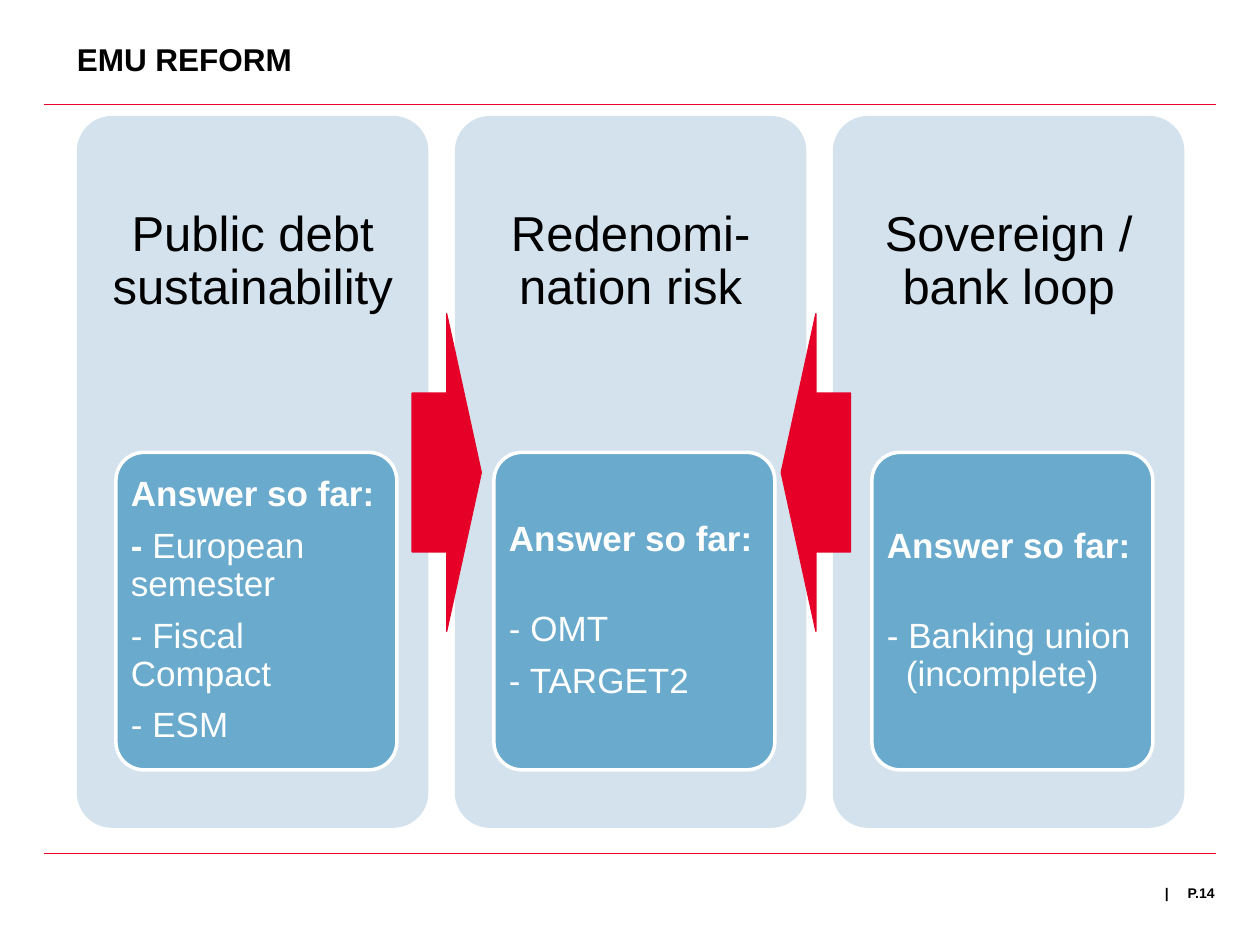
from dataclasses import dataclass

from lxml import etree
from pptx import Presentation
from pptx import util as u
from pptx.dml.color import RGBColor
from pptx.enum import shapes, text
from pptx.oxml import ns


@dataclass(frozen=True)
class Theme:
    """Colours, font and type sizes of the slide."""
    font: str = "Arial"
    red: str = "E60028"
    panel: str = "D4E2ED"
    card: str = "69AACD"
    white: str = "FFFFFF"
    black: str = "000000"
    title: int = 18
    heading: int = 28
    body: int = 20
    footer: int = 8


THEME = Theme()
ANSWER = [("Answer so far:", True)]
COLUMNS = [
    ("Public debt sustainability",
     [ANSWER, [("- ", True), ("European semester", False)],
      [("- Fiscal Compact", False)], [("- ESM", False)]], {}),
    ("Redenomi-nation risk",
     [ANSWER, [("- OMT", False)], [("- TARGET2", False)]],
     {"space_before": u.Pt(21.5)}),
    ("Sovereign / bank loop",
     [ANSWER, [("- Banking union (incomplete)", False)]],
     {"space_before": u.Pt(21.5), "hanging": 0.15}),
]


def apply(target, values):
    """Set every attribute of a dict on the target."""
    for name, value in values.items():
        setattr(target, name, value)


def add_rule(slide, y):
    """Draw a thin red rule across the slide."""
    rule = slide.shapes.add_connector(
        shapes.MSO_CONNECTOR.STRAIGHT,
        u.Inches(9.65), u.Inches(y), u.Inches(0.35), u.Inches(y))
    rule.line.color.rgb = RGBColor.from_string(THEME.red)
    rule.line.width = u.Pt(0.5)
    etree.SubElement(rule._element.spPr, ns.qn("a:effectLst"))


def add_shape(slide, kind, box, fill, line=None, width=0, rotation=0):
    """Add a filled preset shape with an optional outline."""
    shape = slide.shapes.add_shape(kind, *map(u.Inches, box))
    shape.shadow.inherit = False
    shape.rotation = rotation
    shape.fill.solid()
    shape.fill.fore_color.rgb = RGBColor.from_string(fill)
    if line:
        shape.line.color.rgb = RGBColor.from_string(line)
        shape.line.width = u.Pt(width)
    else:
        shape.line.fill.background()
    return shape


def add_rounded(slide, box, fill, line=None, width=0):
    """Add a rounded rectangle."""
    shape = add_shape(slide, shapes.MSO_SHAPE.ROUNDED_RECTANGLE, box, fill, line, width)
    shape.adjustments[0] = 0.1


def add_text(slide, box, paragraphs, size, color, margins=(0, 0),
             anchor=text.MSO_ANCHOR.TOP, wrap=True, **paragraph_format):
    """Add a text box of paragraphs, each a list of (words, bold) runs."""
    frame = slide.shapes.add_textbox(*map(u.Inches, box)).text_frame
    side, edge = map(u.Inches, margins)
    apply(frame, {"margin_left": side, "margin_right": side, "margin_top": edge,
                  "margin_bottom": edge, "vertical_anchor": anchor, "word_wrap": wrap})
    for index, runs in enumerate(paragraphs):
        paragraph = frame.add_paragraph() if index else frame.paragraphs[0]
        apply(paragraph, paragraph_format)
        for words, bold in runs:
            run = paragraph.add_run()
            run.text = words
            apply(run.font, {"name": THEME.font, "size": u.Pt(size), "bold": bold})
            run.font.color.rgb = RGBColor.from_string(color)
    return frame


def add_column(slide, left, heading, answers, first_item):
    """Add a panel with its heading and its answer card."""
    add_rounded(slide, (left, 0.92, 2.79, 5.65), THEME.panel)
    add_text(slide, (left, 0.92, 2.79, 1.7), [[(heading, False)]], THEME.heading,
             THEME.black, (0.12, 0.12), text.MSO_ANCHOR.BOTTOM,
             alignment=text.PP_ALIGN.CENTER, line_spacing=0.9)
    add_rounded(slide, (left + 0.31, 3.59, 2.23, 2.52), THEME.card, THEME.white, 2)
    frame = add_text(slide, (left + 0.37, 3.66, 2.1, 2.38), answers, THEME.body,
                     THEME.white, (0.06, 0.04), text.MSO_ANCHOR.MIDDLE,
                     line_spacing=0.9, space_after=u.Pt(8))
    item = frame.paragraphs[1]
    if "space_before" in first_item:
        item.space_before = first_item["space_before"]
    if "hanging" in first_item:
        indent = u.Inches(first_item["hanging"])
        properties = item._p.get_or_add_pPr()
        properties.set("marL", str(indent))
        properties.set("indent", str(-indent))


def main():
    """Build the slide and save it."""
    presentation = Presentation()
    apply(presentation, {"slide_width": u.Inches(10), "slide_height": u.Inches(7.5)})
    slide = presentation.slides.add_slide(presentation.slide_layouts[6])
    for y in (6.77, 0.83):
        add_rule(slide, y)
    add_text(slide, (9.22, 7.02, 0.08, 0.48), [[("|", True)]], THEME.footer,
             THEME.black, wrap=False, alignment=text.PP_ALIGN.CENTER)
    add_text(slide, (0.61, 0.35, 8.56, 0.55), [[("EMU REFORM", True)]],
             THEME.title, THEME.black, line_spacing=0.9)
    add_text(slide, (9.25, 7.02, 0.39, 0.48), [[("P.14", True)]], THEME.footer,
             THEME.black, alignment=text.PP_ALIGN.RIGHT)
    for index, column in enumerate(COLUMNS):
        add_column(slide, 0.61 + 3 * index, *column)
    for left, rotation in ((3.27, 0), (6.2, 180)):
        add_shape(slide, shapes.MSO_SHAPE.RIGHT_ARROW, (left, 2.49, 0.55, 2.52),
                  THEME.red, THEME.red, 0.75, rotation)
    presentation.save("out.pptx")


if __name__ == "__main__":
    main()
